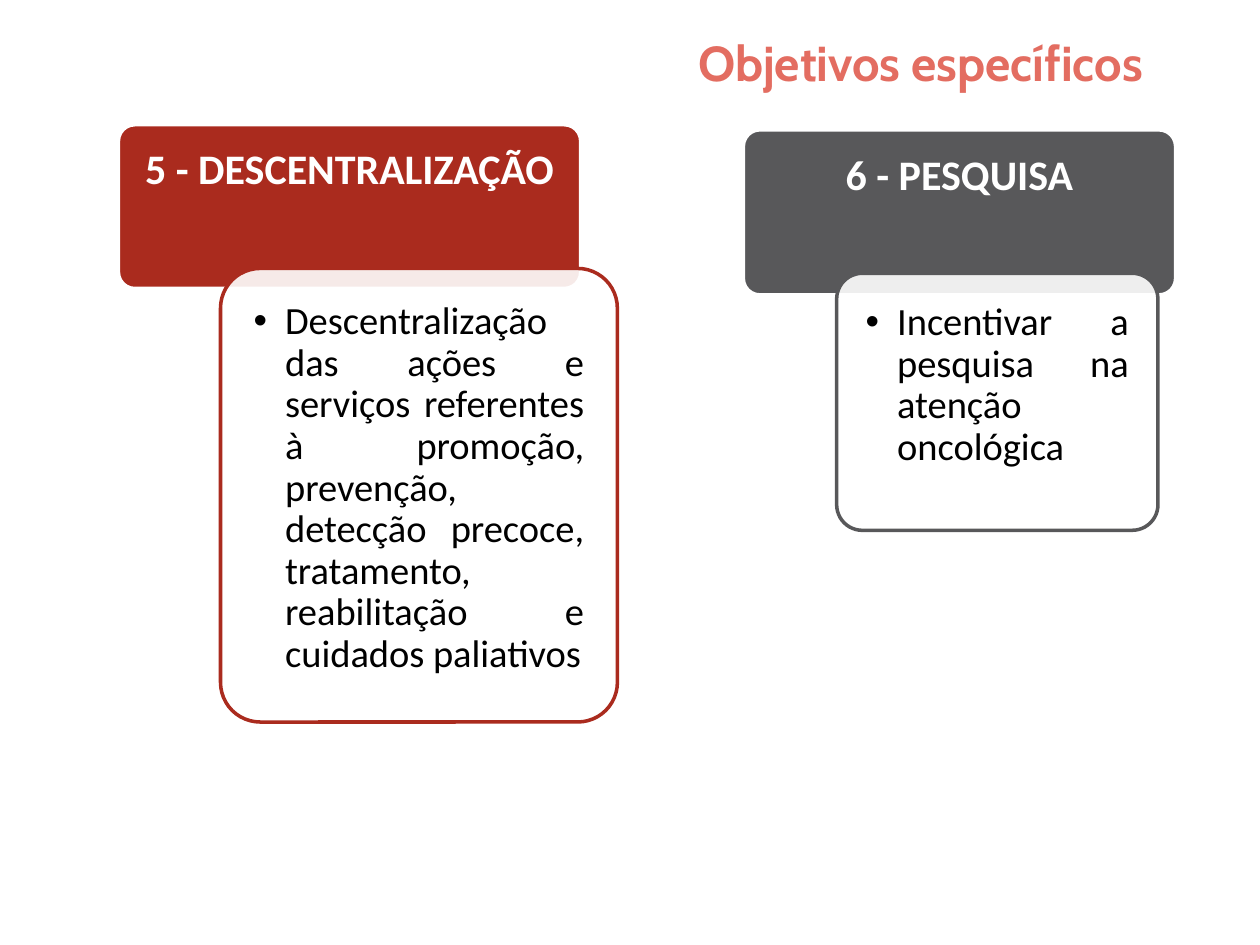
from pptx import Presentation
from pptx.dml.color import RGBColor
from pptx.enum import shapes, text
from pptx.oxml.ns import qn
from pptx.util import Pt
from lxml import etree

RED = RGBColor(0xAA, 0x2B, 0x1E)
GREY = RGBColor(0x58, 0x58, 0x5A)
CORAL = RGBColor(0xE3, 0x6D, 0x61)
WHITE = RGBColor(0xFF, 0xFF, 0xFF)
BLACK = RGBColor(0, 0, 0)

OBJECTIVES = [
    ("5 - DESCENTRALIZAÇÃO",
     "Descentralização das ações e serviços referentes à promoção, prevenção, "
     "detecção precoce, tratamento, reabilitação e cuidados paliativos",
     RED, (67.7, 71.3, 264.2, 93.6), (126, 153.4, 226.8, 259.2)),
    ("6 - PESQUISA",
     "Incentivar a pesquisa na atenção oncológica",
     GREY, (424.8, 74.2, 247, 94.3), (478.1, 156.2, 183.6, 146.9)),
]


def add_run(paragraph, wording, font, size, color, bold=False):
    """Append one formatted run to a paragraph."""
    run = paragraph.add_run()
    run.text = wording
    run.font.name = font
    run.font.size = Pt(size)
    run.font.bold = bold
    run.font.color.rgb = color


def add_panel(slide, box, fill, outline, side_inset, bottom_inset):
    """Draw a rounded panel and return it with its text frame prepared."""
    panel = slide.shapes.add_shape(
        shapes.MSO_SHAPE.ROUNDED_RECTANGLE, *(Pt(length) for length in box))
    panel.adjustments[0] = 0.1
    panel.shadow.inherit = False
    panel.fill.solid()
    panel.fill.fore_color.rgb = fill
    panel.line.color.rgb = outline
    panel.line.width = Pt(2)
    frame = panel.text_frame
    frame.word_wrap = True
    frame.vertical_anchor = text.MSO_ANCHOR.TOP
    frame.margin_left = frame.margin_right = frame.margin_top = Pt(side_inset)
    frame.margin_bottom = Pt(bottom_inset)
    frame.paragraphs[0].line_spacing = 0.9
    return panel


def add_heading(slide, box, wording, color):
    """Draw the coloured heading panel of an objective."""
    heading = add_panel(slide, box, color, WHITE, 10.9, 7.2)
    paragraph = heading.text_frame.paragraphs[0]
    paragraph.alignment = text.PP_ALIGN.CENTER
    add_run(paragraph, wording, "Calibri", 24, WHITE, bold=True)


def add_description(slide, box, wording, color):
    """Draw the translucent panel with the bulleted description."""
    description = add_panel(slide, box, WHITE, color, 12.3, 12.3)
    tint = description.element.spPr.xpath("a:solidFill/a:srgbClr")[0]
    etree.SubElement(tint, qn("a:alpha"), val="90000")
    paragraph = description.text_frame.paragraphs[0]
    properties = paragraph._p.get_or_add_pPr()
    properties.set("marL", str(Pt(18)))
    properties.set("indent", str(-Pt(18)))
    etree.SubElement(properties, qn("a:buFont"), typeface="Arial")
    etree.SubElement(properties, qn("a:buChar"), char="•")
    paragraph.level = 1
    paragraph.alignment = text.PP_ALIGN.JUSTIFY
    add_run(paragraph, wording, "Calibri", 22, BLACK)


def place_title(slide, box, wording):
    """Move and fill the title placeholder."""
    title = slide.shapes.title
    title.left, title.top, title.width, title.height = (Pt(length) for length in box)
    title.text_frame.vertical_anchor = text.MSO_ANCHOR.MIDDLE
    paragraph = title.text_frame.paragraphs[0]
    paragraph.alignment = text.PP_ALIGN.RIGHT
    add_run(paragraph, wording, "Cabin", 28, CORAL, bold=True)


def main():
    """Build the specific objectives slide."""
    deck = Presentation()
    deck.slide_width, deck.slide_height = Pt(720), Pt(540)
    slide = deck.slides.add_slide(deck.slide_layouts[5])
    place_title(slide, (43.2, -0.7, 617, 72), "Objetivos específicos")
    for heading, description, color, heading_box, description_box in OBJECTIVES:
        add_heading(slide, heading_box, heading, color)
        add_description(slide, description_box, description, color)
    deck.save("out.pptx")


if __name__ == "__main__":
    main()
